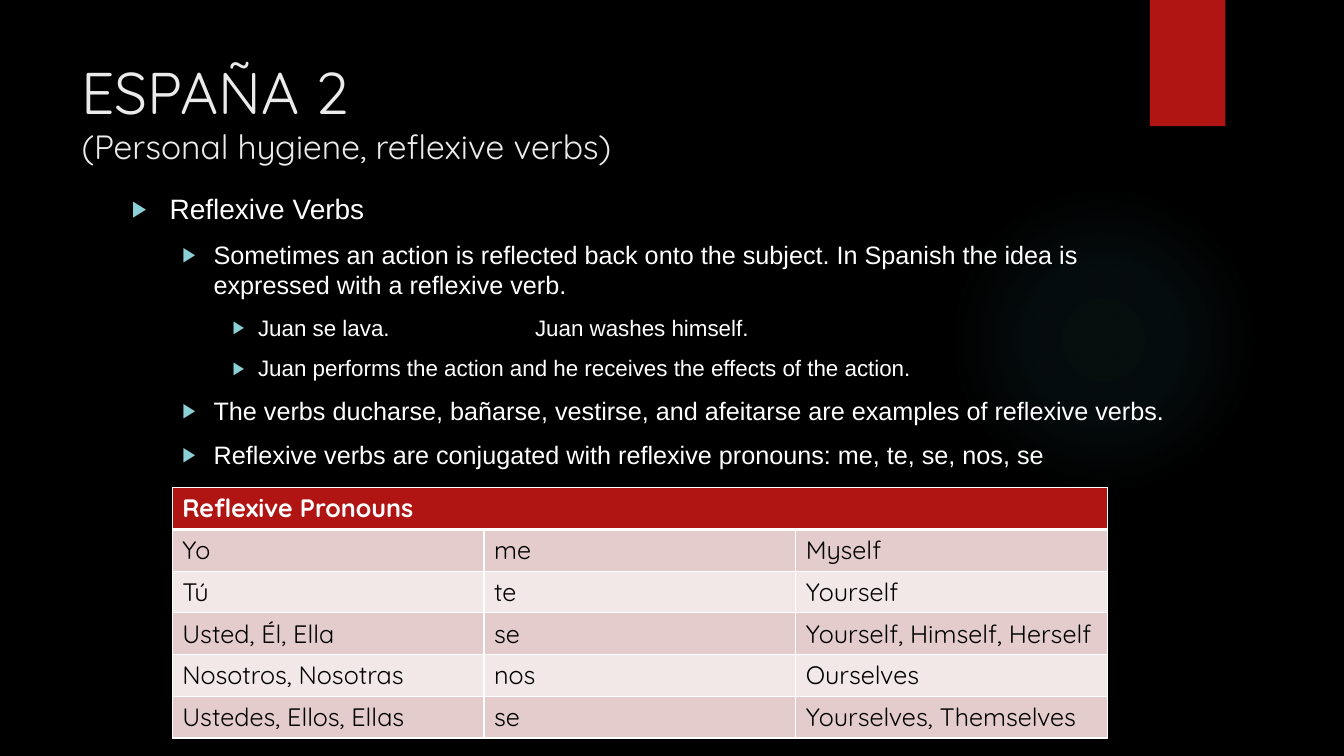
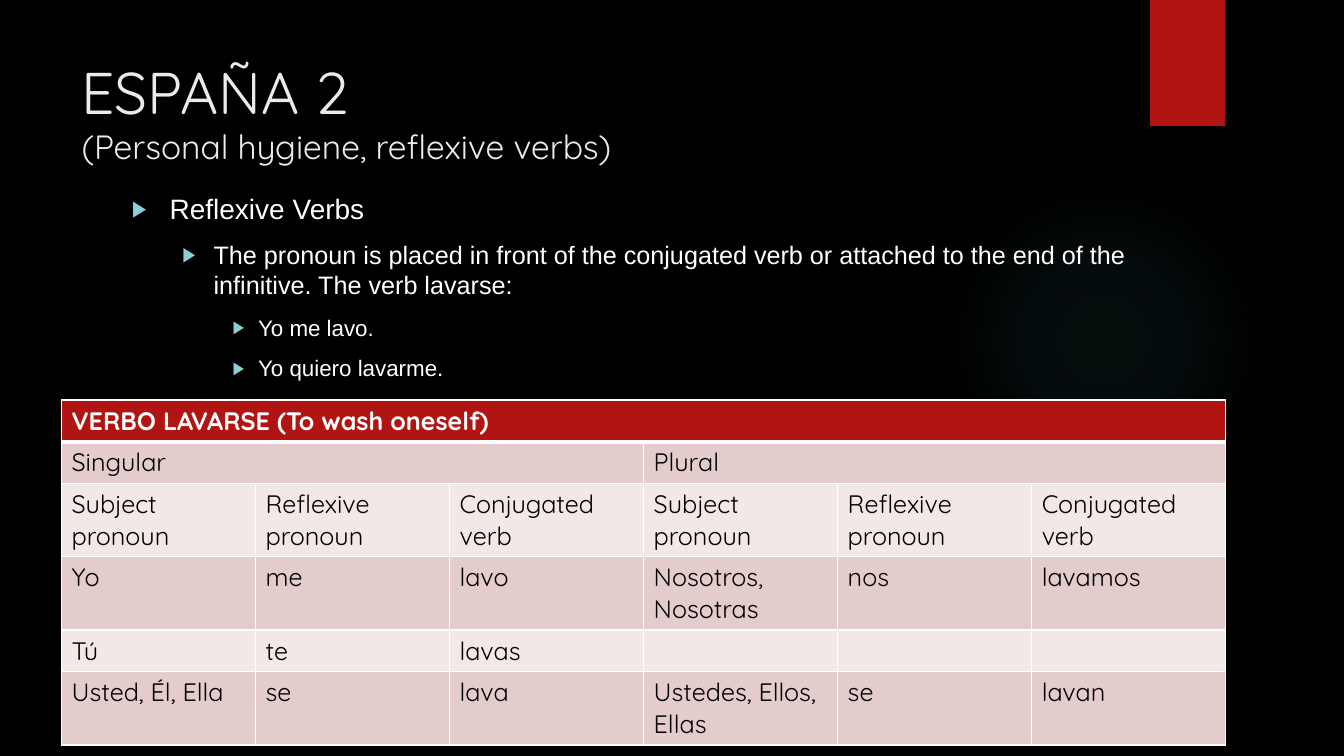
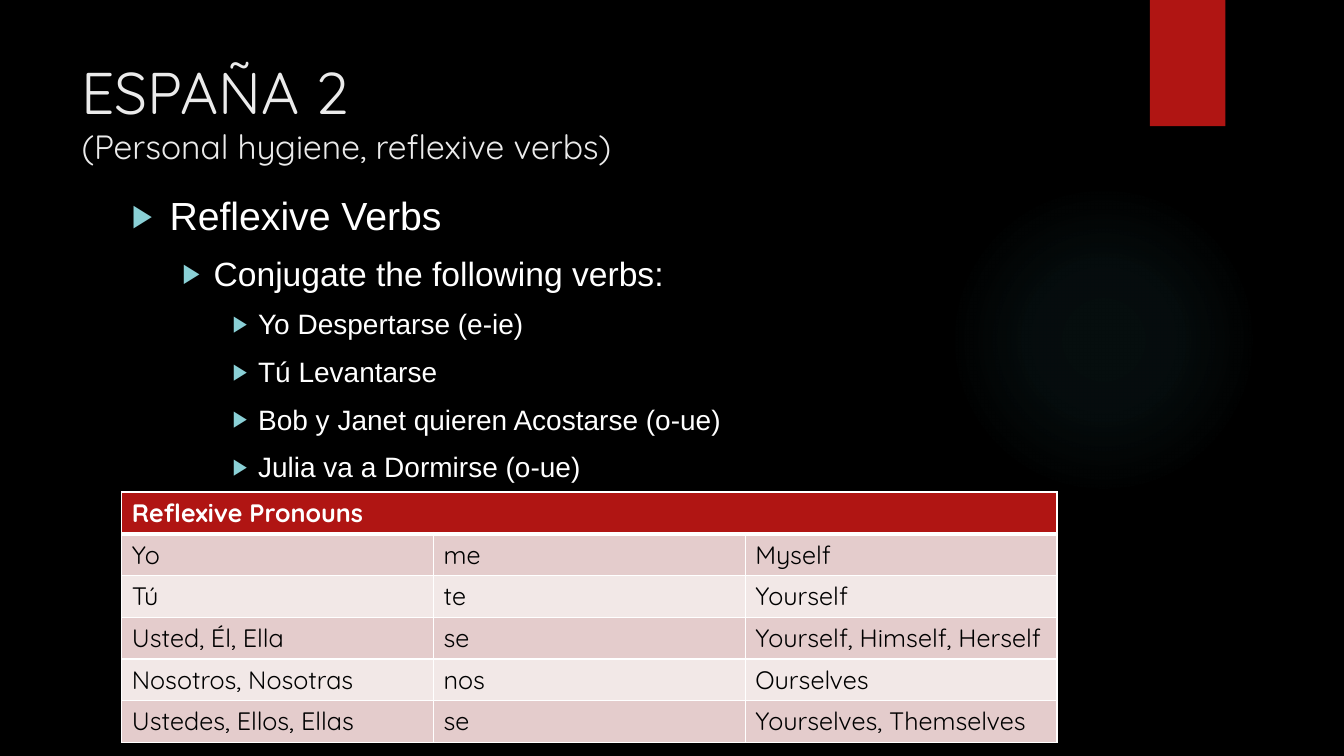
"""Build three slides about Spanish reflexive verbs, with bullets and pronoun tables."""
from dataclasses import dataclass

from lxml.etree import SubElement
from pptx import Presentation
from pptx.dml.color import RGBColor
from pptx.enum.shapes import MSO_SHAPE
from pptx.enum.text import MSO_ANCHOR, MSO_AUTO_SIZE
from pptx.oxml import parse_xml
from pptx.oxml.ns import nsdecls, qn
from pptx.util import Cm, Pt


@dataclass(frozen=True)
class Theme:
    background: str = "000000"
    accent: str = "B01513"
    glow: str = "50B9C1"
    bullet: str = "8AD0D6"
    title: str = "EBEBEB"
    light: str = "FFFFFF"
    dark: str = "000000"
    bands: tuple = ("E4CCCC", "F2E8E7")
    heading_font: str = "Quicksand"
    body_font: str = "Arial"
    title_size: int = 42
    subtitle_size: int = 24
    table_size: int = 18
    body_sizes: tuple = (20, 18, 16)
    large_body_sizes: tuple = (28, 24, 20)
    grid_width: int = 1
    header_rule_width: int = 3


theme = Theme()


def add_level(placeholder, level, attributes, bullet, size, color, font):
    """Add one inherited paragraph level to a layout placeholder."""
    styles = placeholder.element.find(".//" + qn("a:lstStyle"))
    styles.append(parse_xml(
        f'<a:lvl{level}pPr {nsdecls("a")} algn="l" {attributes}>{bullet}'
        f'<a:defRPr sz="{size * 100}"><a:solidFill><a:srgbClr val="{color}"/></a:solidFill>'
        f'<a:latin typeface="{font}"/></a:defRPr></a:lvl{level}pPr>'))


def set_border(cell, side, width):
    """Draw one solid edge of a table cell."""
    properties = cell._tc.get_or_add_tcPr()
    line = SubElement(properties, qn(f"a:ln{side}"), w=str(Pt(width)))
    fill = SubElement(line, qn("a:solidFill"))
    SubElement(fill, qn("a:srgbClr"), val=theme.light)


pronoun_rows = [
    ["Reflexive Pronouns", None, None],
    ["Yo", "me", "Myself"],
    ["Tú", "te", "Yourself"],
    ["Usted, Él, Ella", "se", "Yourself, Himself, Herself"],
    ["Nosotros, Nosotras", "nos", "Ourselves"],
    ["Ustedes, Ellos, Ellas", "se", "Yourselves, Themselves"],
]
verb_rows = [
    ["VERBO LAVARSE (To wash oneself)"] + [None] * 5,
    ["Singular", None, None, "Plural", None, None],
    ["Subject pronoun", "Reflexive pronoun", "Conjugated verb"] * 2,
    ["Yo", "me", "lavo", "Nosotros, Nosotras", "nos", "lavamos"],
    ["Tú", "te", "lavas", "", "", ""],
    ["Usted, Él, Ella", "se", "lava", "Ustedes, Ellos, Ellas", "se", "lavan"],
]
lessons = [
    (theme.body_sizes, [
        (0, "Reflexive Verbs"),
        (1, "Sometimes an action is reflected back onto the subject. "
            "In Spanish the idea is expressed with a reflexive verb."),
        (2, "Juan se lava.\tJuan washes himself."),
        (2, "Juan performs the action and he receives the effects of the action."),
        (1, "The verbs ducharse, bañarse, vestirse, and afeitarse are examples of reflexive verbs."),
        (1, "Reflexive verbs are conjugated with reflexive pronouns: me, te, se, nos, se"),
    ], pronoun_rows, (4.34, 12.29, 23.57)),
    (theme.body_sizes, [
        (0, "Reflexive Verbs"),
        (1, "The pronoun is placed in front of the conjugated verb or attached "
            "to the end of the infinitive. The verb lavarse:"),
        (2, "Yo me lavo."),
        (2, "Yo quiero lavarme."),
    ], verb_rows, (1.55, 10.08, 29.34)),
    (theme.large_body_sizes, [
        (0, "Reflexive Verbs"),
        (1, "Conjugate the following verbs:"),
        (2, "Yo Despertarse (e-ie)"),
        (2, "Tú Levantarse"),
        (2, "Bob y Janet quieren Acostarse (o-ue)"),
        (2, "Julia va a Dormirse (o-ue)"),
    ], pronoun_rows, (3.07, 12.4, 23.57)),
]

deck = Presentation()
deck.slide_width, deck.slide_height = Cm(33.87), Cm(19.05)
background = deck.slide_master.background.fill
background.solid()
background.fore_color.rgb = RGBColor.from_string(theme.background)

layout = deck.slide_layouts[1]
title_area, body_area = layout.placeholders[0], layout.placeholders[1]
for area, bounds in ((title_area, (1.8, 1.27, 26.14, 3.89)), (body_area, (3.07, 4.7, 26.82, 11.66))):
    area.left, area.top, area.width, area.height = map(Cm, bounds)
    area.text_frame.vertical_anchor = MSO_ANCHOR.TOP
    area.text_frame.auto_size = MSO_AUTO_SIZE.NONE

add_level(title_area, 1, "", "", theme.title_size, theme.title, theme.heading_font)
bullet = (f'<a:spcBef><a:spcPts val="1000"/></a:spcBef>'
          f'<a:buClr><a:srgbClr val="{theme.bullet}"/></a:buClr><a:buSzPct val="80000"/>'
          f'<a:buFont typeface="{theme.body_font}"/><a:buChar char="▶"/>'
          f'<a:tabLst><a:tab pos="{Cm(10.16)}" algn="l"/></a:tabLst>')
for level, (margin, hanging) in enumerate(((0.95, 0.95), (2.06, 0.79), (3.18, 0.64)), start=1):
    add_level(body_area, level, f'marL="{Cm(margin)}" indent="{-Cm(hanging)}"', bullet,
              theme.body_sizes[level - 1], theme.light, theme.body_font)

pages = [deck.slides.add_slide(layout) for lesson in lessons]

glow = pages[0].shapes.add_shape(MSO_SHAPE.OVAL, Cm(23.9), Cm(4.65), Cm(7.82), Cm(7.82))
ribbon = pages[0].shapes.add_shape(MSO_SHAPE.RECTANGLE, Cm(28.98), Cm(0), Cm(1.9), Cm(3.18))
for position, shape in enumerate((glow, ribbon), start=2):
    shape.line.fill.background()
    shape.fill.solid()
    shape.fill.fore_color.rgb = RGBColor.from_string(theme.accent)
    shape.shadow.inherit = False
    layout.shapes.element.insert(position, shape.element)

stops = "".join(
    f'<a:gs pos="{place * 1000}"><a:srgbClr val="{theme.glow}"><a:alpha val="{alpha * 1000}"/></a:srgbClr></a:gs>'
    for place, alpha in ((0, 7), (36, 6), (69, 0), (100, 0)))
solid = glow.element.spPr.find(qn("a:solidFill"))
glow.element.spPr.replace(solid, parse_xml(
    f'<a:gradFill {nsdecls("a")}><a:gsLst>{stops}</a:gsLst><a:path path="circle">'
    f'<a:fillToRect l="50000" t="50000" r="50000" b="50000"/></a:path></a:gradFill>'))
ribbon.element.spPr.find(qn("a:effectLst")).append(parse_xml(
    f'<a:outerShdw {nsdecls("a")} blurRad="{Pt(3)}" dist="{Pt(2)}" dir="5400000" rotWithShape="0">'
    f'<a:srgbClr val="{theme.dark}"><a:alpha val="45000"/></a:srgbClr></a:outerShdw>'))

for page, (sizes, bullets, rows, (left, top, width)) in zip(pages, lessons):
    page.shapes.title.text_frame.text = "ESPAÑA 2\v(Personal hygiene, reflexive verbs)"
    page.shapes.title.text_frame.paragraphs[0].runs[1].font.size = Pt(theme.subtitle_size)

    frame = page.placeholders[1].text_frame
    frame.text = "\n".join(text for level, text in bullets)
    for para, (level, text) in zip(frame.paragraphs, bullets):
        para.level = level
        for span in para.runs:
            span.font.size = Pt(sizes[level])
    frame.paragraphs[0].space_before = Pt(0)

    columns = len(rows[0])
    table = page.shapes.add_table(len(rows), columns, Cm(left), Cm(top), Cm(width), Cm(1.05) * len(rows)).table
    for column in table.columns:
        column.width = Cm(width / columns)
    for row, texts in enumerate(rows):
        header = row == 0
        for column, text in enumerate(texts):
            cell = table.cell(row, column)
            for side in "LRTB":
                ruled = (row, side) in ((0, "B"), (1, "T"))
                set_border(cell, side, theme.header_rule_width if ruled else theme.grid_width)
            cell.fill.solid()
            cell.fill.fore_color.rgb = RGBColor.from_string(theme.accent if header else theme.bands[(row - 1) % 2])
            if not text:
                continue
            cell.text_frame.text = text
            font = cell.text_frame.paragraphs[0].runs[0].font
            font.name, font.size, font.bold = theme.heading_font, Pt(theme.table_size), header
            font.color.rgb = RGBColor.from_string(theme.light if header else theme.dark)
        starts = [column for column, text in enumerate(texts) if text is not None]
        for start, end in zip(starts, starts[1:] + [columns]):
            if end - start > 1:
                table.cell(row, start).merge(table.cell(row, end - 1))

deck.save("out.pptx")
